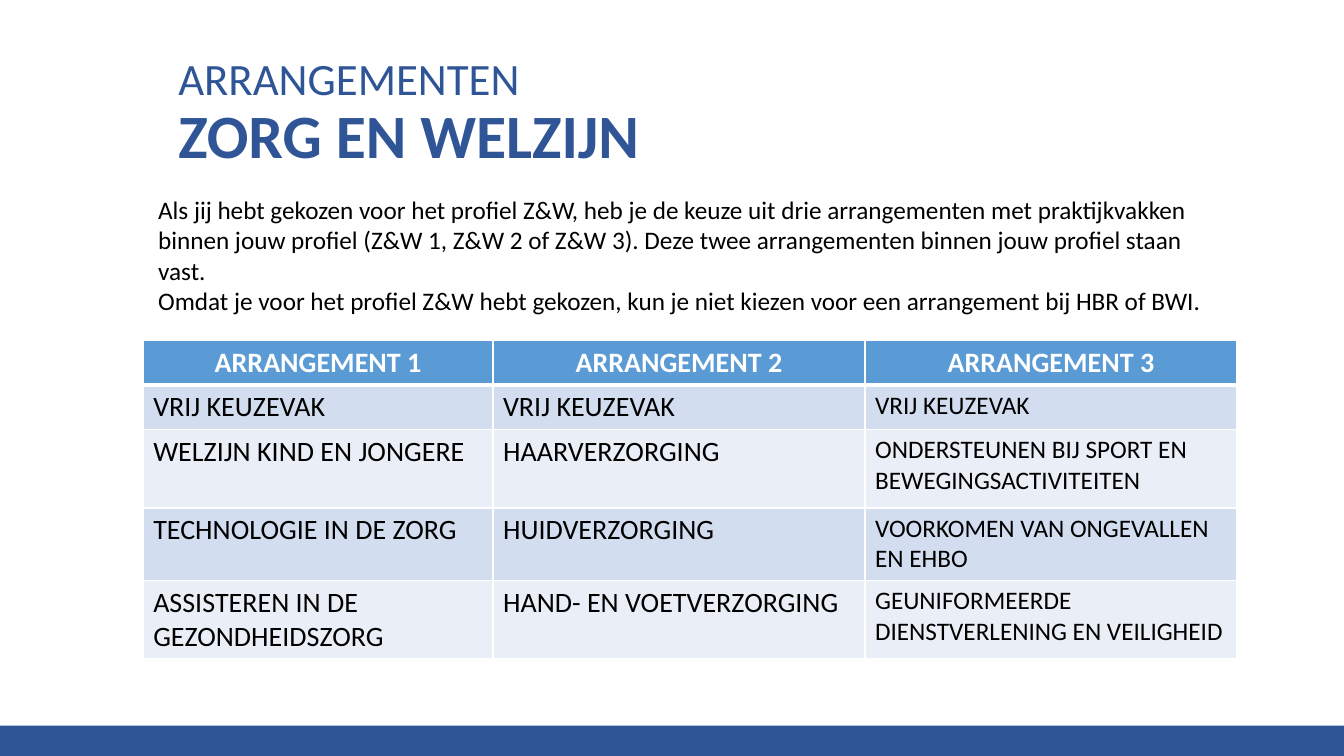
from lxml import etree
from pptx import Presentation
from pptx.dml.color import RGBColor
from pptx.enum import shapes, text
from pptx.oxml import ns
from pptx.util import Inches, Pt

COLORS = {
    "navy": "2F5597", "header": "5B9BD5", "band": "D2DEEF",
    "light": "EAEFF7", "white": "FFFFFF", "black": "000000",
}
INTRO = [
    "Als jij hebt gekozen voor het profiel Z&W, heb je de keuze uit drie "
    "arrangementen met praktijkvakken binnen jouw profiel (Z&W 1, Z&W 2 of "
    "Z&W 3). Deze twee arrangementen binnen jouw profiel staan vast.",
    "Omdat je voor het profiel Z&W hebt gekozen, kun je niet kiezen voor een "
    "arrangement bij HBR of BWI.",
]
ROWS = [
    ["ARRANGEMENT 1", "ARRANGEMENT 2", "ARRANGEMENT 3"],
    ["VRIJ KEUZEVAK", "VRIJ KEUZEVAK", "VRIJ KEUZEVAK"],
    ["WELZIJN KIND EN JONGERE", "HAARVERZORGING",
     "ONDERSTEUNEN BIJ SPORT EN BEWEGINGSACTIVITEITEN"],
    ["TECHNOLOGIE IN DE ZORG", "HUIDVERZORGING",
     "VOORKOMEN VAN ONGEVALLEN EN EHBO"],
    ["ASSISTEREN IN DE GEZONDHEIDSZORG", "HAND- EN VOETVERZORGING",
     "GEUNIFORMEERDE DIENSTVERLENING EN VEILIGHEID"],
]
COL_WIDTHS = [3.47, 3.69, 3.69]
ROW_HEIGHTS = [0.44, 0.44, 0.78, 0.72, 0.77]


def rgb(name):
    """Return the named colour."""
    return RGBColor.from_string(COLORS[name])


def style(font, size, color, bold=False):
    """Apply the slide's typeface with a size, colour and weight."""
    font.name = "Calibri"
    font.size = Pt(size)
    font.bold = bold
    font.color.rgb = rgb(color)


def add_text_frame(s, left, top, width, height):
    """Add a wrapping text box and return its text frame."""
    box = s.shapes.add_textbox(*map(Inches, (left, top, width, height)))
    box.text_frame.word_wrap = True
    return box.text_frame


def add_title(s):
    """Add the two-line title."""
    tf = add_text_frame(s, 1.67, 0.5, 10, 1.25)
    tf.vertical_anchor = text.MSO_ANCHOR.BOTTOM
    p = tf.paragraphs[0]
    p.line_spacing = 0.9
    r = p.add_run()
    r.text = "ARRANGEMENTEN"
    style(r.font, 32, "navy")
    p.add_line_break()
    r = p.add_run()
    r.text = "ZORG EN WELZIJN"
    style(r.font, 44, "navy", True)


def add_intro(s):
    """Add the explanatory paragraphs."""
    tf = add_text_frame(s, 1.42, 1.88, 10.85, 1.31)
    tf.text = "\n".join(INTRO)
    for p in tf.paragraphs:
        style(p.font, 18, "black")
        p._p.get_or_add_pPr().set("marL", str(Inches(0.05)))


def add_borders(cell, bottom):
    """Draw white cell borders with the given bottom width."""
    tc_pr = cell._tc.get_or_add_tcPr()
    widths = {"lnL": 1, "lnR": 1, "lnT": 1, "lnB": bottom}
    for i, (side, width) in enumerate(widths.items()):
        ln = etree.Element(ns.qn(f"a:{side}"), w=str(Pt(width)))
        fill = etree.SubElement(ln, ns.qn("a:solidFill"))
        etree.SubElement(fill, ns.qn("a:srgbClr"), val=COLORS["white"])
        tc_pr.insert(i, ln)


def fill_cell(cell, words, row, col):
    """Write and format one table cell."""
    header = row == 0
    cell.text = words
    p = cell.text_frame.paragraphs[0]
    if header:
        p.alignment = text.PP_ALIGN.CENTER
        style(p.font, 20, "white", True)
    else:
        style(p.font, 18 if col == 2 else 20, "black")
    cell.fill.solid()
    cell.fill.fore_color.rgb = rgb(
        "header" if header else "band" if row % 2 else "light")
    add_borders(cell, 3 if header else 1)


def add_arrangements(s):
    """Add the table of arrangements."""
    table = s.shapes.add_table(
        len(ROWS), len(COL_WIDTHS), Inches(1.42), Inches(3.38),
        Inches(sum(COL_WIDTHS)), Inches(sum(ROW_HEIGHTS))).table
    for column, width in zip(table.columns, COL_WIDTHS):
        column.width = Inches(width)
    for i, (height, row) in enumerate(zip(ROW_HEIGHTS, ROWS)):
        table.rows[i].height = Inches(height)
        for j, words in enumerate(row):
            fill_cell(table.cell(i, j), words, i, j)


def add_footer_bar(s):
    """Add the bar along the bottom edge."""
    bar = s.shapes.add_shape(
        shapes.MSO_SHAPE.RECTANGLE, 0, Inches(7.2), Inches(13.33), Inches(0.3))
    bar.shadow.inherit = False
    bar.fill.solid()
    bar.fill.fore_color.rgb = rgb("navy")
    bar.line.fill.background()


def main():
    """Build and save the slide."""
    prs = Presentation()
    prs.slide_width, prs.slide_height = Inches(13.33), Inches(7.5)
    s = prs.slides.add_slide(prs.slide_layouts[6])
    add_footer_bar(s)
    add_title(s)
    add_arrangements(s)
    add_intro(s)
    prs.save("out.pptx")


if __name__ == "__main__":
    main()
